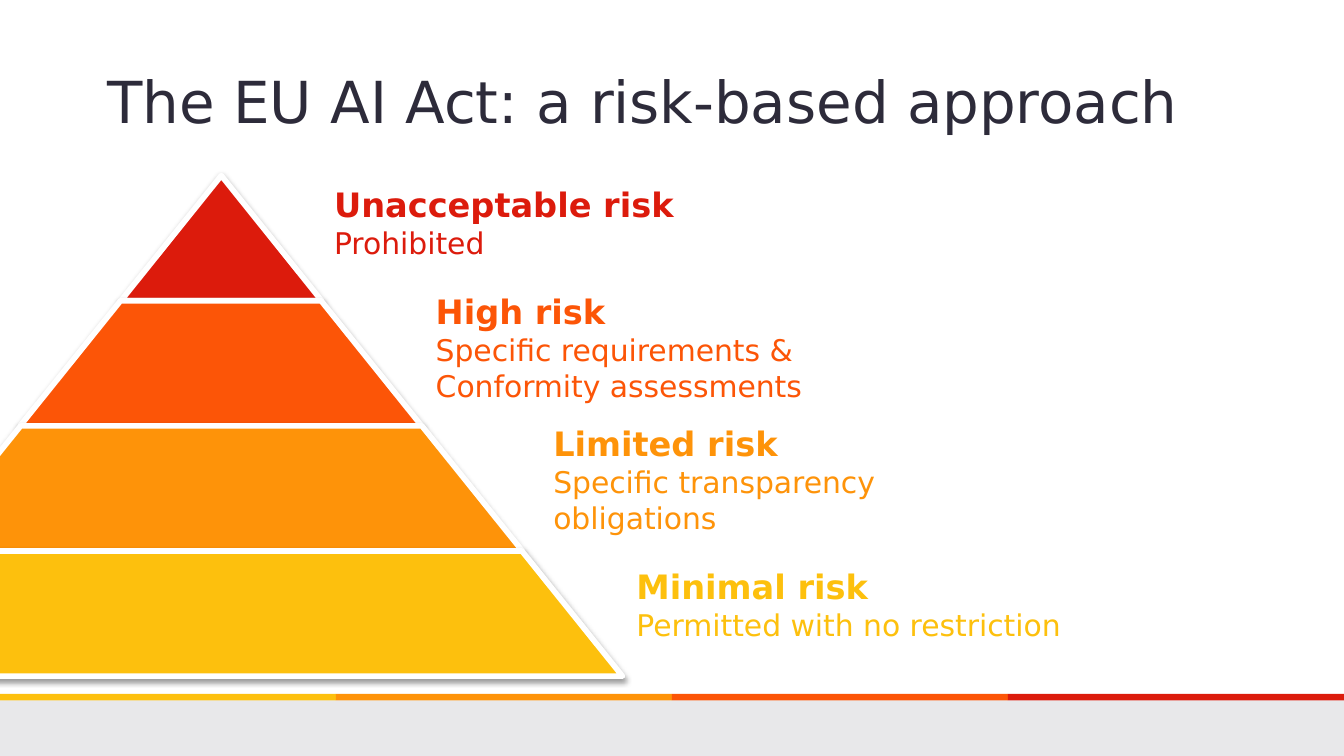
from dataclasses import dataclass

from lxml import etree
from pptx import Presentation
from pptx.dml.color import RGBColor
from pptx.enum.shapes import MSO_SHAPE
from pptx.enum.text import MSO_ANCHOR, MSO_AUTO_SIZE, PP_ALIGN
from pptx.oxml.ns import qn
from pptx.util import Emu, Pt

RECTANGLE = MSO_SHAPE.RECTANGLE
TRAPEZOID = MSO_SHAPE.TRAPEZOID
TOP = MSO_ANCHOR.TOP
LEFT = PP_ALIGN.LEFT
FIXED_SIZE = MSO_AUTO_SIZE.NONE
GROW = MSO_AUTO_SIZE.SHAPE_TO_FIT_TEXT

FONT = "DejaVu Sans"
INK = "2D2B3A"
WHITE = "FFFFFF"
PALE_GREY = "E8E8EA"

PAGE_WIDTH, PAGE_HEIGHT = 1600, 900
APEX_X, APEX_Y = 263, 209
TIER_HEIGHT, TIER_STEP = 149, 239
SLOPE = 0.803
STRIPE_TOP, STRIPE_HEIGHT = 826, 8
FOOTER_TOP = STRIPE_TOP + STRIPE_HEIGHT


@dataclass(frozen=True)
class Risk:
    color: str
    heading: str
    details: tuple[str, ...]
    left: int
    top: int
    width: int
    height: int
    wrap: bool


RISKS = (
    Risk("DC1B0C", "Unacceptable risk", ("Prohibited",), 382, 211, 437, 107, False),
    Risk("FC5507", "High risk", ("Specific requirements &", "Conformity assessments"),
         503, 339, 475, 150, False),
    Risk("FE9309", "Limited risk", ("Specific transparency obligations",),
         643, 496, 560, 150, True),
    Risk("FDC00D", "Minimal risk", ("Permitted with no restriction",),
         742, 666, 560, 107, True),
)


def px(length: int) -> Emu:
    """Convert px to EMU, at 160 px to the inch."""
    return Emu(length * 5715)


def rgb(color: str) -> RGBColor:
    return RGBColor.from_string(color)


def add_block(page, kind, left: int, top: int, width: int, height: int, color: str):
    block = page.shapes.add_shape(kind, px(left), px(top), px(width), px(height))
    block.shadow.inherit = False
    block.fill.solid()
    block.fill.fore_color.rgb = rgb(color)
    block.line.fill.background()
    return block


def add_shadow(block, opacity: int, distance: float) -> None:
    """Give a block a soft black shadow straight below it."""
    effects = block._element.spPr.find(qn("a:effectLst"))
    shadow = etree.SubElement(
        effects, qn("a:outerShdw"), blurRad=str(Pt(3.1)), dist=str(Pt(distance)),
        dir="5400000", rotWithShape="0")
    black = etree.SubElement(shadow, qn("a:srgbClr"), val="000000")
    etree.SubElement(black, qn("a:alpha"), val=str(opacity * 1000))


def format_paragraph(para, size: int, color: str, bold: bool = False) -> None:
    para.alignment = LEFT
    for span in para.runs:
        span.font.name = FONT
        span.font.size = Pt(size)
        span.font.bold = bold
        span.font.color.rgb = rgb(color)


def add_footer(page) -> None:
    footer = add_block(page, RECTANGLE, 0, FOOTER_TOP, PAGE_WIDTH,
                       PAGE_HEIGHT - FOOTER_TOP, PALE_GREY)
    add_shadow(footer, 35, 1.8)
    stripe_width = PAGE_WIDTH // len(RISKS)
    for index, risk in enumerate(reversed(RISKS)):
        add_block(page, RECTANGLE, index * stripe_width, STRIPE_TOP,
                  stripe_width, STRIPE_HEIGHT, risk.color)


def set_title(page, text: str) -> None:
    title = page.shapes.title
    title.left, title.top, title.width, title.height = px(112), px(70), px(1360), px(139)
    frame = title.text_frame
    frame.text = text
    frame.auto_size = FIXED_SIZE
    frame.vertical_anchor = TOP
    frame.margin_top = px(8)
    format_paragraph(frame.paragraphs[0], 31, INK)


def add_tier(page, level: int, color: str) -> None:
    """Draw one pyramid layer; level 0 is the tip."""
    width = TIER_STEP * (level + 1)
    tier = add_block(page, TRAPEZOID, APEX_X - width // 2, APEX_Y + level * TIER_HEIGHT,
                     width, TIER_HEIGHT, color)
    tier.adjustments[0] = SLOPE
    tier.line.color.rgb = rgb(WHITE)
    tier.line.width = Pt(3)
    add_shadow(tier, 38, 1.6)


def add_label(page, risk: Risk) -> None:
    box = page.shapes.add_textbox(px(risk.left), px(risk.top),
                                  px(risk.width), px(risk.height))
    frame = box.text_frame
    frame.word_wrap = risk.wrap
    frame.auto_size = GROW
    frame.text = risk.heading
    format_paragraph(frame.paragraphs[0], 18, risk.color, bold=True)
    for detail in risk.details:
        para = frame.add_paragraph()
        para.text = detail
        format_paragraph(para, 16, risk.color)


def main() -> None:
    deck = Presentation()
    deck.slide_width, deck.slide_height = px(PAGE_WIDTH), px(PAGE_HEIGHT)
    page = deck.slides.add_slide(deck.slide_layouts[5])
    add_footer(page)
    set_title(page, "The EU AI Act: a risk-based approach")
    for level, risk in enumerate(RISKS):
        add_tier(page, level, risk.color)
    for risk in RISKS:
        add_label(page, risk)
    deck.save("out.pptx")


if __name__ == "__main__":
    main()
